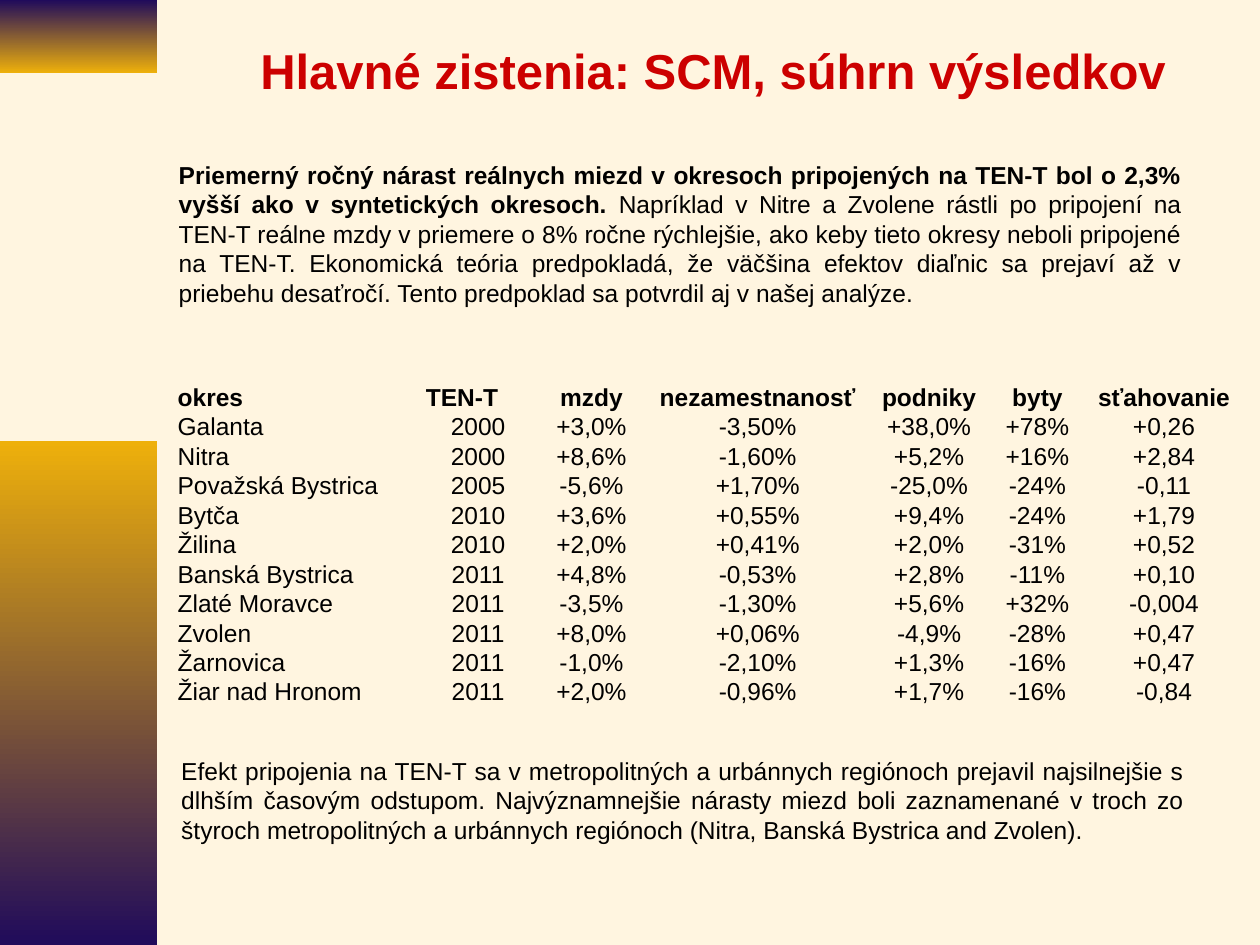
import pptx
import pptx.dml.color
import pptx.enum.shapes
import pptx.enum.text
import pptx.oxml.ns
import pptx.util
from lxml import etree

Inches = pptx.util.Inches
Pt = pptx.util.Pt
RGBColor = pptx.dml.color.RGBColor
ALIGN = pptx.enum.text.PP_ALIGN
MIDDLE = pptx.enum.text.MSO_ANCHOR.MIDDLE

CREAM = RGBColor(0xFF, 0xF5, 0xE0)
NAVY = RGBColor(0x20, 0x0B, 0x5B)
GOLD = RGBColor(0xEE, 0xB0, 0x0B)
RED = RGBColor(0xCC, 0x00, 0x00)
BLACK = RGBColor(0x00, 0x00, 0x00)

TITLE = "Hlavné zistenia: SCM, súhrn výsledkov"
WAGE_FINDING = (
    "Priemerný ročný nárast reálnych miezd v okresoch pripojených na TEN-T "
    "bol o 2,3% vyšší ako v syntetických okresoch. "
)
WAGE_DETAIL = (
    "Napríklad v Nitre a Zvolene rástli po pripojení na TEN-T reálne mzdy v "
    "priemere o 8% ročne rýchlejšie, ako keby tieto okresy neboli pripojené na "
    "TEN-T. Ekonomická teória predpokladá, že väčšina efektov diaľnic sa prejaví "
    "až v priebehu desaťročí. Tento predpoklad sa potvrdil aj v našej analýze."
)
REGION_EFFECT = (
    "Efekt pripojenia na TEN-T sa v metropolitných a urbánnych regiónoch "
    "prejavil najsilnejšie s dlhším časovým odstupom. Najvýznamnejšie nárasty "
    "miezd boli zaznamenané v troch zo štyroch metropolitných a urbánnych "
    "regiónoch (Nitra, Banská Bystrica and Zvolen)."
)
DISTRICTS = [
    ("okres", "TEN-T", "mzdy", "nezamestnanosť", "podniky", "byty", "sťahovanie"),
    ("Galanta", "2000", "+3,0%", "-3,50%", "+38,0%", "+78%", "+0,26"),
    ("Nitra", "2000", "+8,6%", "-1,60%", "+5,2%", "+16%", "+2,84"),
    ("Považská Bystrica", "2005", "-5,6%", "+1,70%", "-25,0%", "-24%", "-0,11"),
    ("Bytča", "2010", "+3,6%", "+0,55%", "+9,4%", "-24%", "+1,79"),
    ("Žilina", "2010", "+2,0%", "+0,41%", "+2,0%", "-31%", "+0,52"),
    ("Banská Bystrica", "2011", "+4,8%", "-0,53%", "+2,8%", "-11%", "+0,10"),
    ("Zlaté Moravce", "2011", "-3,5%", "-1,30%", "+5,6%", "+32%", "-0,004"),
    ("Zvolen", "2011", "+8,0%", "+0,06%", "-4,9%", "-28%", "+0,47"),
    ("Žarnovica", "2011", "-1,0%", "-2,10%", "+1,3%", "-16%", "+0,47"),
    ("Žiar nad Hronom", "2011", "+2,0%", "-0,96%", "+1,7%", "-16%", "-0,84"),
]
COLUMN_WIDTHS = [1.97, 0.93, 0.87, 1.77, 0.95, 0.77, 1.24]


def add_run(paragraph, text, size=14, color=BLACK, bold=False):
    run = paragraph.add_run()
    run.text = text
    run.font.name = "Arial"
    run.font.size = Pt(size)
    run.font.color.rgb = color
    run.font.bold = bold


def add_side_band(slide, left, top, width, height, upper, lower):
    band = slide.shapes.add_shape(
        pptx.enum.shapes.MSO_SHAPE.RECTANGLE,
        Inches(left), Inches(top), Inches(width), Inches(height),
    )
    band.shadow.inherit = False
    band.line.fill.background()
    band.fill.gradient()
    band.fill.gradient_angle = 270
    for stop, color, position in zip(band.fill.gradient_stops, (upper, lower), (0, 1)):
        stop.color.rgb = color
        stop.position = position


def add_text_frame(slide, left, top, width, height):
    frame = slide.shapes.add_textbox(
        Inches(left), Inches(top), Inches(width), Inches(height)
    ).text_frame
    frame.word_wrap = True
    return frame


def add_title(slide, left, top, width, height):
    frame = add_text_frame(slide, left, top, width, height)
    frame.vertical_anchor = MIDDLE
    frame.paragraphs[0].alignment = ALIGN.CENTER
    add_run(frame.paragraphs[0], TITLE, 28, RED, True)


def add_commentary(slide, left, top, width, height, parts):
    frame = add_text_frame(slide, left, top, width, height)
    frame.auto_size = pptx.enum.text.MSO_AUTO_SIZE.SHAPE_TO_FIT_TEXT
    frame.paragraphs[0].alignment = ALIGN.JUSTIFY
    for text, bold in parts:
        add_run(frame.paragraphs[0], text, bold=bold)


def clear_cell_style(cell):
    properties = cell._tc.get_or_add_tcPr()
    for side in ("a:lnL", "a:lnR", "a:lnT", "a:lnB"):
        border = etree.SubElement(properties, pptx.oxml.ns.qn(side), w="0")
        etree.SubElement(border, pptx.oxml.ns.qn("a:noFill"))
    cell.fill.background()


def add_district_table(slide, left, top, row_height):
    table = slide.shapes.add_table(
        len(DISTRICTS), len(COLUMN_WIDTHS), Inches(left), Inches(top),
        Inches(sum(COLUMN_WIDTHS)), Inches(row_height * len(DISTRICTS)),
    ).table
    table.first_row = False
    table.horz_banding = False
    for column, width in zip(table.columns, COLUMN_WIDTHS):
        column.width = Inches(width)
    for row_index, values in enumerate(DISTRICTS):
        table.rows[row_index].height = Inches(row_height)
        is_header = row_index == 0
        for column_index, value in enumerate(values):
            cell = table.cell(row_index, column_index)
            clear_cell_style(cell)
            cell.vertical_anchor = MIDDLE
            cell.margin_left = cell.margin_right = Inches(0.05)
            cell.margin_top = cell.margin_bottom = 0
            paragraph = cell.text_frame.paragraphs[0]
            justified = column_index == 0 or (is_header and column_index == 1)
            paragraph.alignment = ALIGN.JUSTIFY if justified else ALIGN.CENTER
            add_run(paragraph, value, bold=is_header)


def main():
    presentation = pptx.Presentation()
    presentation.slide_width = Inches(10)
    presentation.slide_height = Inches(7.5)
    slide = presentation.slides.add_slide(presentation.slide_layouts[6])
    slide.background.fill.solid()
    slide.background.fill.fore_color.rgb = CREAM
    add_side_band(slide, 0, 0, 1.25, 0.58, NAVY, GOLD)
    add_side_band(slide, 0, 3.5, 1.25, 4, GOLD, NAVY)
    add_title(slide, 1.66, 0.14, 8, 0.83)
    add_commentary(slide, 1.32, 1.22, 8.16, 1.28,
                   [(WAGE_FINDING, True), (WAGE_DETAIL, False)])
    add_district_table(slide, 1.36, 3.04, 0.21)
    add_commentary(slide, 1.34, 5.95, 8.16, 0.81, [(REGION_EFFECT, False)])
    presentation.save("out.pptx")


if __name__ == "__main__":
    main()
